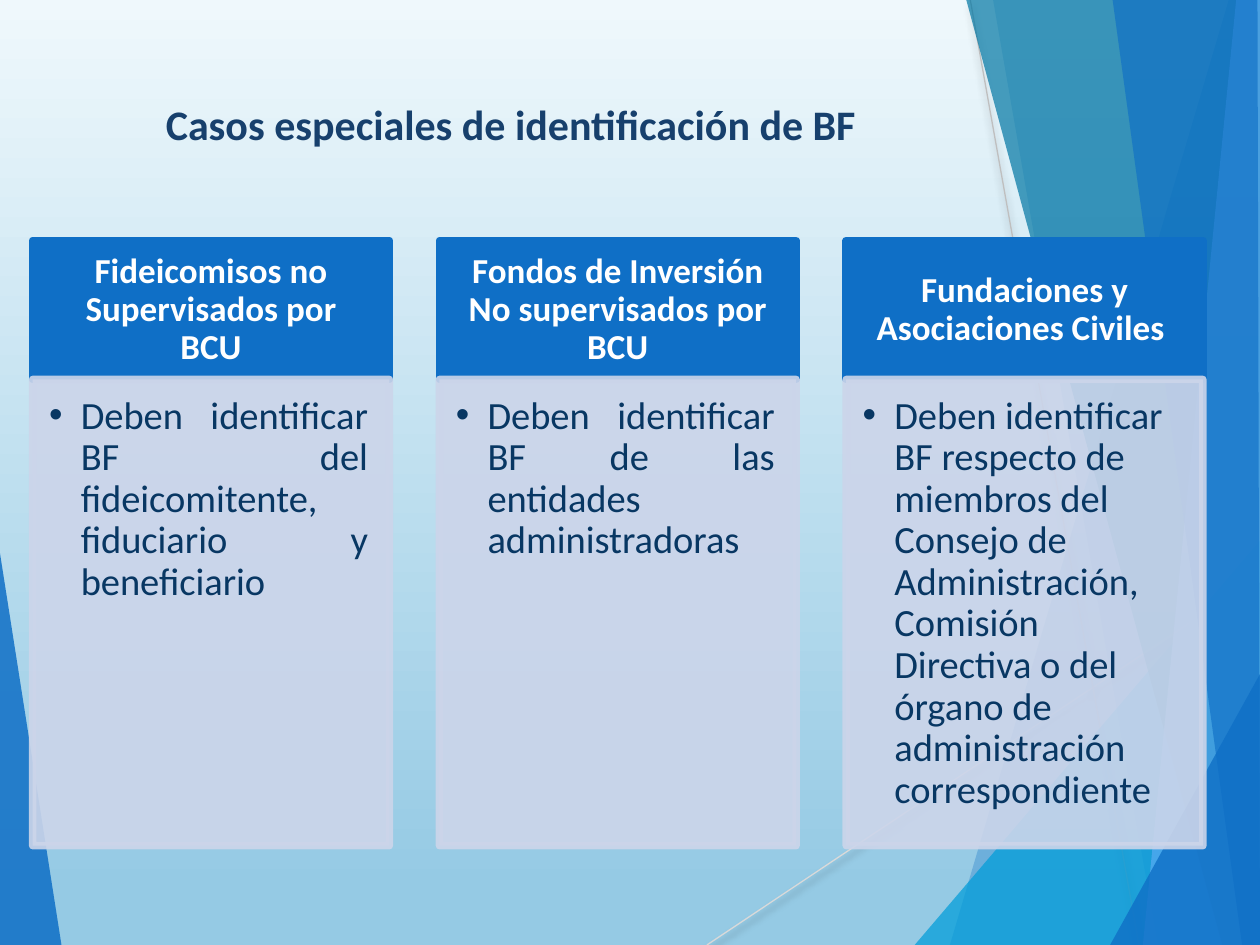
import pptx
import pptx.util
import pptx.dml.color
import pptx.enum.text
import pptx.enum.shapes
import pptx.oxml
import pptx.oxml.ns
from lxml import etree

Cm, Pt = pptx.util.Cm, pptx.util.Pt
RGB = pptx.dml.color.RGBColor
Align = pptx.enum.text.PP_ALIGN
Anchor = pptx.enum.text.MSO_ANCHOR
qn = pptx.oxml.ns.qn

BLUE = RGB(0x0F, 0x6F, 0xC6)
CYAN = RGB(0x00, 0x9D, 0xD9)
TEAL = RGB(0x00, 0x76, 0xA3)
SKY = RGB(0x59, 0xAA, 0xF2)
PALE = RGB(0xCC, 0xD5, 0xEA)
NAVY = RGB(0x17, 0x40, 0x6D)
INK = RGB(0x08, 0x37, 0x63)
WHITE = RGB(0xFF, 0xFF, 0xFF)
TOP = RGB(0xEF, 0xF8, 0xFC)
LOW = RGB(0x95, 0xCA, 0xE4)
GRAY = RGB(0xBF, 0xBF, 0xBF)
SILVER = RGB(0xD9, 0xD9, 0xD9)

WIDE, HIGH = 25.4, 19.05
TITLE = "Casos especiales de identificación de BF"
CARDS = [
    ("Fideicomisos no Supervisados por BCU",
     "Deben identificar BF del fideicomitente, fiduciario y beneficiario",
     Align.JUSTIFY),
    ("Fondos de Inversión No supervisados por BCU",
     "Deben identificar BF de las entidades administradoras",
     Align.JUSTIFY),
    ("Fundaciones y Asociaciones Civiles ",
     "Deben identificar BF respecto de miembros del Consejo de Administración, "
     "Comisión Directiva o del órgano de administración correspondiente",
     Align.LEFT),
]
LEFT_EDGE = [(0, 11.15), (1.24, HIGH), (0, HIGH)]
RAYS = [
    (14.25, HIGH, WIDE, 11.61, SILVER),
    (19.56, 0, 22.96, HIGH, GRAY),
]
CORNER = [(WIDE, HIGH), (WIDE, 0)]
BANDS = [
    ([(24.77, 0), (19.15, HIGH)] + CORNER, BLUE, 30),
    ([(20.02, 0), (23.34, HIGH)] + CORNER, BLUE, 20),
    ([(18.44, HIGH), (WIDE, 10.9), (WIDE, HIGH)], CYAN, 72),
    ([(19.48, 0), (24.64, HIGH)] + CORNER, TEAL, 70),
    ([(24.92, 0), (23.04, HIGH)] + CORNER, SKY, 70),
    ([(22.43, 0), (25.04, HIGH), (WIDE, HIGH), (25.35, 0)], BLUE, 65),
    ([(22.38, HIGH), (WIDE, 13.59), (WIDE, HIGH)], BLUE, 80),
]
START, STEP, CARD_W = 0.66, 8.2, 7.19
HEAD_Y, HEAD_H, BODY_Y, BODY_H = 4.85, 2.8, 7.65, 9.4


def paint(fill, color, alpha=100):
    fill.solid()
    fill.fore_color.rgb = color
    if alpha < 100:
        node = fill._xPr.find(qn("a:solidFill"))[0]
        etree.SubElement(node, qn("a:alpha"), val=str(alpha * 1000))


def draw_band(shapes, points, color, alpha):
    pen = shapes.build_freeform(Cm(points[0][0]), Cm(points[0][1]))
    pen.add_line_segments([(Cm(x), Cm(y)) for x, y in points[1:]], close=True)
    band = pen.convert_to_shape()
    band.shadow.inherit = False
    paint(band.fill, color, alpha)
    band.line.fill.background()


def draw_ray(shapes, x1, y1, x2, y2, color):
    ray = shapes.add_connector(pptx.enum.shapes.MSO_CONNECTOR.STRAIGHT,
                               Cm(x1), Cm(y1), Cm(x2), Cm(y2))
    ray.line.color.rgb = color
    ray.line.width = Pt(0.75)
    glow = etree.SubElement(ray._element.spPr, qn("a:effectLst"))
    shade = etree.SubElement(glow, qn("a:outerShdw"), blurRad=str(Pt(4)),
                             dist=str(Pt(3)), dir="5400000", rotWithShape="0")
    tone = etree.SubElement(shade, qn("a:srgbClr"), val="000000")
    etree.SubElement(tone, qn("a:alpha"), val="35000")


def write(shape, text, size, color, bold, align, anchor, pads):
    frame = shape.text_frame
    frame.word_wrap = True
    frame.vertical_anchor = anchor
    (frame.margin_left, frame.margin_top,
     frame.margin_right, frame.margin_bottom) = [Cm(pad) for pad in pads]
    frame.text = text
    para = frame.paragraphs[0]
    para.alignment = align
    font = para.runs[0].font
    font.name, font.size, font.bold = "Calibri", Pt(size), bold
    font.color.rgb = color
    return para


def draw_box(shapes, x, y, high, color, alpha):
    box = shapes.add_shape(pptx.enum.shapes.MSO_SHAPE.RECTANGLE,
                           Cm(x), Cm(y), Cm(CARD_W), Cm(high))
    box.shadow.inherit = False
    paint(box.fill, color, alpha)
    box.line.width = Pt(4.33)
    paint(box.line.fill, color, alpha)
    return box


def draw_card(shapes, x, head, body, align):
    box = draw_box(shapes, x, HEAD_Y, HEAD_H, BLUE, 100)
    para = write(box, head, 20, WHITE, True, Align.CENTER, Anchor.MIDDLE,
                 (0.4, 0.23, 0.4, 0.23))
    para.line_spacing = 0.9
    box = draw_box(shapes, x, BODY_Y, BODY_H, PALE, 90)
    para = write(box, body, 22, INK, False, align, Anchor.TOP,
                 (0.33, 0.33, 0.43, 0.48))
    para.line_spacing = 0.9
    props = para._p.get_or_add_pPr()
    props.set("marL", str(Cm(0.64)))
    props.set("indent", str(-Cm(0.64)))
    etree.SubElement(props, qn("a:buFont"), typeface="Arial")
    etree.SubElement(props, qn("a:buChar"), char="•")


def main():
    deck = pptx.Presentation()
    deck.slide_width, deck.slide_height = Cm(WIDE), Cm(HIGH)
    slide = deck.slides.add_slide(deck.slide_layouts[6])
    shapes = slide.shapes
    back = slide.background.fill
    back.gradient()
    back.gradient_angle = 270
    for stop, color, place in zip(back.gradient_stops, (TOP, LOW), (0, 0.94)):
        stop.color.rgb = color
        stop.position = place

    draw_band(shapes, LEFT_EDGE, BLUE, 85)
    for ray in RAYS:
        draw_ray(shapes, *ray)
    for band in BANDS:
        draw_band(shapes, *band)

    title = shapes.add_textbox(Cm(1.3), Cm(1.85), Cm(18), Cm(1.27))
    write(title, TITLE, 24, NAVY, True, Align.CENTER, Anchor.TOP,
          (0.25, 0.13, 0.25, 0.13))
    for i, card in enumerate(CARDS):
        draw_card(shapes, START + i * STEP, *card)
    deck.save("out.pptx")


if __name__ == "__main__":
    main()
